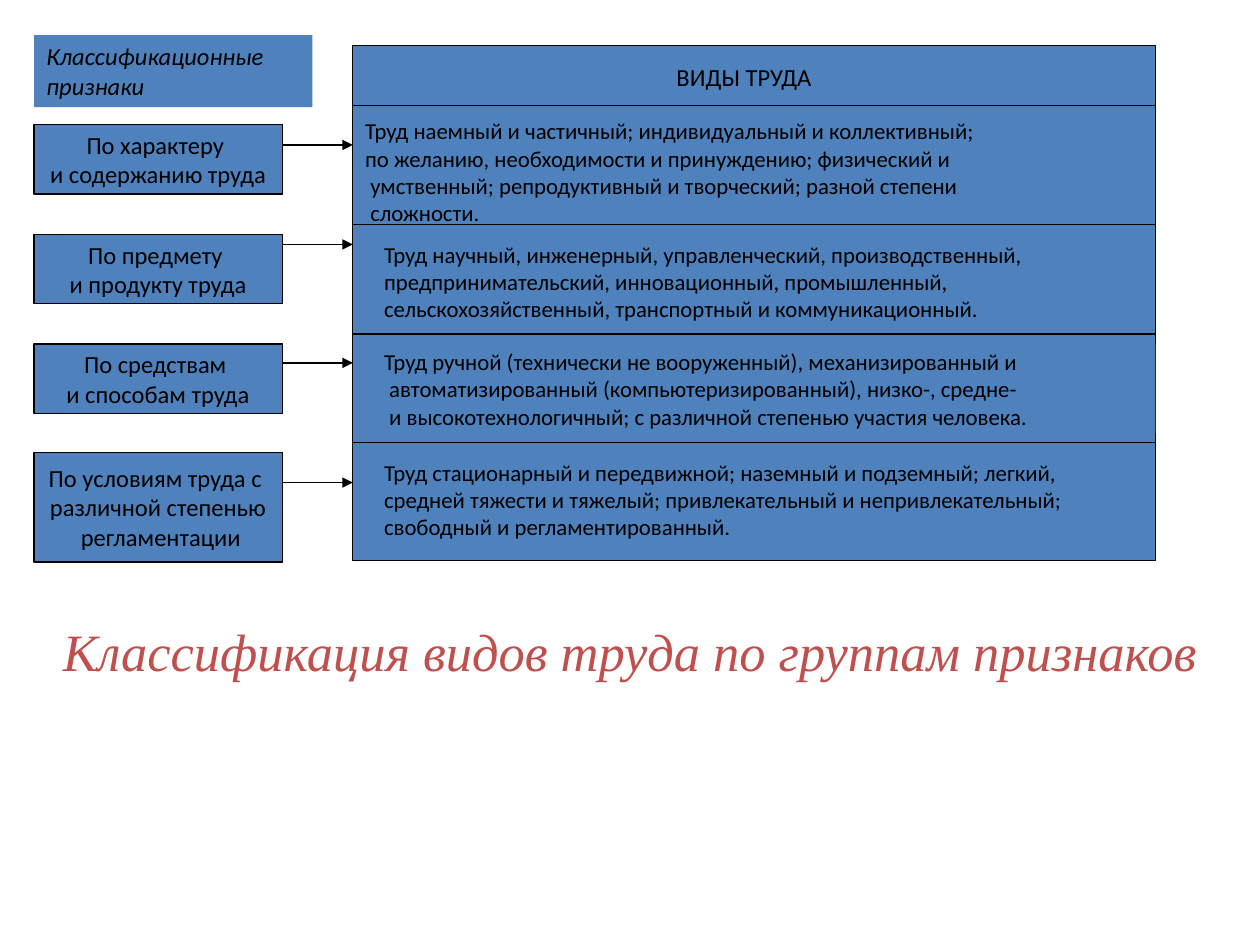
from pptx import Presentation
from pptx.dml.color import RGBColor
from pptx.enum.shapes import MSO_CONNECTOR, MSO_SHAPE
from pptx.enum.text import MSO_ANCHOR, PP_ALIGN
from pptx.oxml.ns import qn
from pptx.util import Inches, Pt
from lxml import etree

RECT = MSO_SHAPE.RECTANGLE
STRAIGHT = MSO_CONNECTOR.STRAIGHT
LEFT, CENTER = PP_ALIGN.LEFT, PP_ALIGN.CENTER
TOP, MIDDLE = MSO_ANCHOR.TOP, MSO_ANCHOR.MIDDLE

COLORS = {"box": "4F81BD", "ink": "000000", "title": "C0504D"}
LABEL_LEFT, LABEL_WIDTH = 0.27, 1.97
PANEL_LEFT, PANEL_TOP, PANEL_WIDTH, PANEL_HEIGHT = 2.8, 0.36, 6.37, 4.09
TEXT_LEFT = 2.95

LABELS = [
    (0.99, 0.55, 1.15, ["По характеру ", "и содержанию труда"]),
    (1.86, 0.55, 1.94, ["По предмету ", "и продукту труда"]),
    (2.73, 0.55, 2.88, ["По средствам ", "и способам труда"]),
    (3.59, 0.87, 3.83,
     ["По условиям труда с ", "различной степенью", " регламентации"]),
]
DIVIDERS = [0.84, 1.78, 2.65, 3.51]

BY_CHARACTER = [
    "Труд наемный и частичный; индивидуальный и коллективный;",
    "по желанию, необходимости и принуждению; физический и",
    " умственный; репродуктивный и творческий; разной степени",
    " сложности.",
]
BY_SUBJECT = [
    "Труд научный, инженерный, управленческий, производственный, "
    "предпринимательский, инновационный, промышленный, "
    "сельскохозяйственный, транспортный и коммуникационный.",
]
BY_MEANS = [
    "Труд ручной (технически не вооруженный), механизированный и",
    " автоматизированный (компьютеризированный), низко-, средне-",
    " и высокотехнологичный; с различной степенью участия человека.",
]
BY_CONDITIONS = [
    "Труд стационарный и передвижной; наземный и подземный; легкий, "
    "средней тяжести и тяжелый; привлекательный и непривлекательный; "
    "свободный и регламентированный.",
]


class Deck:
    font = "Calibri"

    def __init__(self, prs):
        self.s = prs.slides.add_slide(prs.slide_layouts[5])

    def color(self, name):
        return RGBColor.from_string(COLORS[name])

    def set_text(self, sp, lines, size, align=LEFT, anchor=TOP, wrap=True,
                 italic=False, color="ink", font=None):
        tf = sp.text_frame
        tf.text = "\n".join(lines)
        tf.word_wrap = wrap
        tf.vertical_anchor = anchor
        for p in tf.paragraphs:
            p.alignment = align
            p.font.name = font or self.font
            p.font.size = Pt(size)
            p.font.italic = italic
            p.font.color.rgb = self.color(color)

    def title(self, text, x, y, w, h):
        sp = self.s.shapes.title
        sp.left, sp.top, sp.width, sp.height = map(Inches, (x, y, w, h))
        self.set_text(sp, [text], 30, CENTER, MIDDLE, italic=True,
                      color="title", font="Times New Roman")

    def box(self, x, y, w, h, lines, size, outlined=True, **style):
        sp = self.s.shapes.add_shape(RECT, *map(Inches, (x, y, w, h)))
        sp.shadow.inherit = False
        sp.fill.solid()
        sp.fill.fore_color.rgb = self.color("box")
        if outlined:
            sp.line.color.rgb = self.color("ink")
            sp.line.width = Pt(0.75)
        else:
            sp.line.fill.background()
        self.set_text(sp, lines, size, **style)
        return sp

    def text(self, x, y, w, h, lines, size, **style):
        sp = self.s.shapes.add_textbox(*map(Inches, (x, y, w, h)))
        self.set_text(sp, lines, size, **style)

    def line(self, x1, x2, y, arrow=False):
        sp = self.s.shapes.add_connector(
            STRAIGHT, Inches(x1), Inches(y), Inches(x2), Inches(y))
        sp.line.color.rgb = self.color("ink")
        sp.line.width = Pt(0.75)
        spPr = sp._element.spPr
        if arrow:
            ln = spPr.find(qn("a:ln"))
            etree.SubElement(ln, qn("a:tailEnd"), type="triangle")
        etree.SubElement(spPr, qn("a:effectLst"))


def main():
    prs = Presentation()
    prs.slide_width, prs.slide_height = Inches(10), Inches(7.5)
    deck = Deck(prs)

    deck.title("Классификация видов труда по группам признаков",
               0, 4.54, 10, 1.25)
    deck.box(LABEL_LEFT, 0.28, 2.21, 0.57, ["Классификационные признаки"],
             14, outlined=False, italic=True)

    for y, h, arrow_y, lines in LABELS:
        deck.box(LABEL_LEFT, y, LABEL_WIDTH, h, lines, 14,
                 align=CENTER, anchor=MIDDLE, wrap=False)
        deck.line(LABEL_LEFT + LABEL_WIDTH, PANEL_LEFT, arrow_y, arrow=True)

    panel = deck.box(PANEL_LEFT, PANEL_TOP, PANEL_WIDTH, PANEL_HEIGHT,
                     BY_CHARACTER, 13)
    panel.text_frame.margin_top = Inches(0.57)
    for y in DIVIDERS:
        deck.line(PANEL_LEFT, PANEL_LEFT + PANEL_WIDTH, y)

    deck.text(4.21, 0.44, 3.39, 0.33, ["ВИДЫ ТРУДА"], 14, align=CENTER)
    deck.text(TEXT_LEFT, 1.86, 6.06, 0.75, BY_SUBJECT, 13)
    deck.box(TEXT_LEFT, 2.73, 6.22, 0.71, BY_MEANS, 13,
             outlined=False, anchor=MIDDLE)
    deck.text(TEXT_LEFT, 3.59, 6.14, 0.75, BY_CONDITIONS, 13)

    prs.save("out.pptx")


if __name__ == "__main__":
    main()
